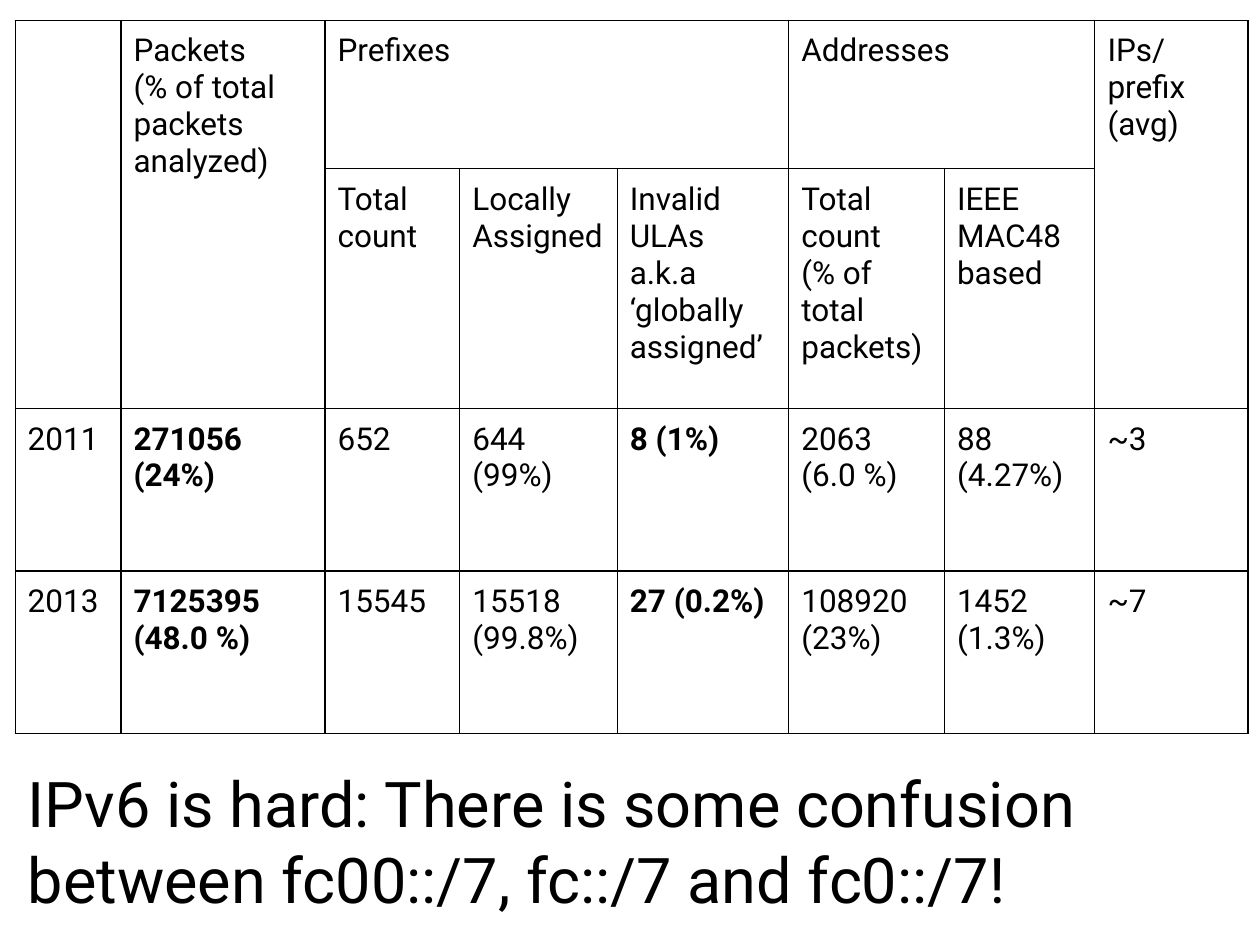
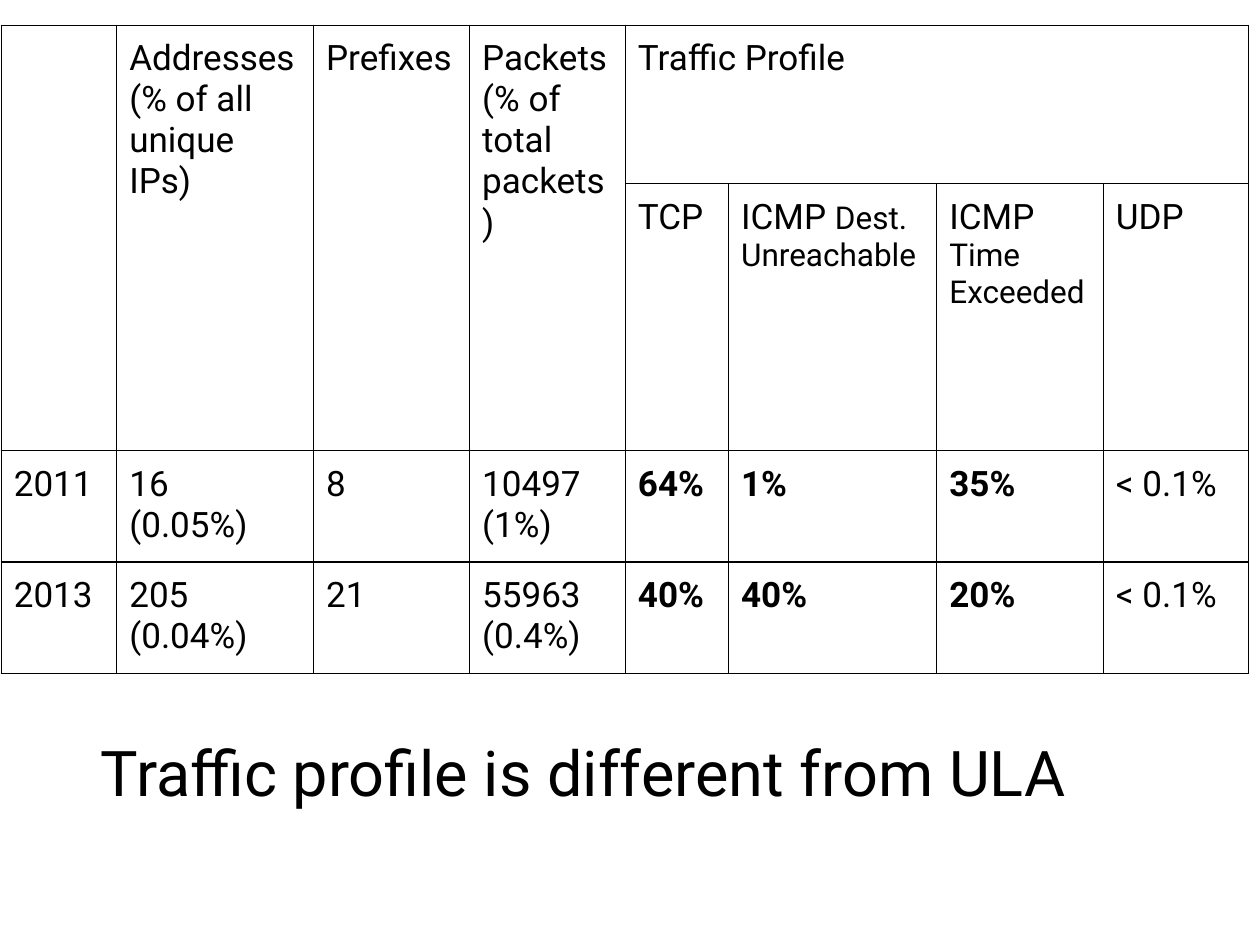
from dataclasses import dataclass

from lxml import etree
from pptx import Presentation
from pptx.dml.color import RGBColor
from pptx.enum.text import MSO_ANCHOR, MSO_AUTO_SIZE, PP_ALIGN
from pptx.oxml.ns import qn
from pptx.util import Pt

TOP = MSO_ANCHOR.TOP
LEFT = PP_ALIGN.LEFT
NO_FIT = MSO_AUTO_SIZE.NONE
TITLE_ONLY = 5


@dataclass(frozen=True)
class Theme:
    font: str = "Roboto"
    ink: str = "000000"
    paper: str = "FFFFFF"
    title: float = 36
    large: float = 20
    small: float = 18
    pad: float = 7.2
    rule: float = 0.75


THEME = Theme()


def write(frame, lines, *, size, color, font, bold=False):
    """Fill a frame; a line is a string or a list of (text, size) runs."""
    for i, line in enumerate(lines):
        para = frame.paragraphs[0] if i == 0 else frame.add_paragraph()
        para.alignment = LEFT
        runs = [(line, size)] if isinstance(line, str) else line
        for text, points in runs:
            run = para.add_run()
            run.text = text
            run.font.name = font
            run.font.size = Pt(points)
            run.font.bold = bold
            run.font.color.rgb = RGBColor.from_string(color)


class Deck:
    def __init__(self, theme):
        self.theme = theme
        self.prs = Presentation()
        self.prs.slide_width, self.prs.slide_height = Pt(720), Pt(540)
        self.slide = None

    def page(self):
        self.slide = self.prs.slides.add_slide(self.prs.slide_layouts[TITLE_ONLY])
        fill = self.slide.background.fill
        fill.solid()
        fill.fore_color.rgb = RGBColor.from_string(self.theme.paper)

    def pad(self, box):
        box.margin_left = box.margin_right = Pt(self.theme.pad)
        box.margin_top = box.margin_bottom = Pt(self.theme.pad)
        box.vertical_anchor = TOP

    def title(self, text, x, y, w, h):
        shape = self.slide.shapes.title
        shape.left, shape.top, shape.width, shape.height = map(Pt, (x, y, w, h))
        frame = shape.text_frame
        frame.word_wrap = True
        frame.auto_size = NO_FIT
        self.pad(frame)
        t = self.theme
        write(frame, [text], size=t.title, color=t.ink, font=t.font)

    def border(self, cell):
        props = cell._tc.get_or_add_tcPr()
        for i, side in enumerate(("lnL", "lnR", "lnT", "lnB")):
            line = etree.Element(qn(f"a:{side}"), w=str(Pt(self.theme.rule)))
            fill = etree.SubElement(line, qn("a:solidFill"))
            etree.SubElement(fill, qn("a:srgbClr"), val=self.theme.ink)
            props.insert(i, line)

    def table(self, x, y, cols, rows, cells, *, spans, strong, size):
        """Spans are (row, col, last row, last col); strong columns hold bold data."""
        shape = self.slide.shapes.add_table(
            len(rows), len(cols), Pt(x), Pt(y), Pt(sum(cols)), Pt(sum(rows)))
        grid = shape.table
        grid.first_row = grid.horz_banding = False
        for col, width in zip(grid.columns, cols):
            col.width = Pt(width)
        for row, height in zip(grid.rows, rows):
            row.height = Pt(height)
        for r, c, r2, c2 in spans:
            grid.cell(r, c).merge(grid.cell(r2, c2))
        t = self.theme
        for r, row in enumerate(cells):
            for c, value in enumerate(row):
                cell = grid.cell(r, c)
                cell.fill.background()
                self.border(cell)
                self.pad(cell)
                if value:
                    lines = value.split("\n") if isinstance(value, str) else value
                    write(cell.text_frame, lines, size=size, color=t.ink,
                          font=t.font, bold=r > 1 and c in strong)


def main():
    deck = Deck(THEME)
    big, small = THEME.large, THEME.small

    # Prefix and address counts
    deck.page()
    deck.title("IPv6 is hard: There is some confusion between "
               "fc00::/7, fc::/7 and fc0::/7!", 8.64, 429.84, 711.36, 96.5)
    deck.table(
        8.64, 11.52,
        [60.5, 116.6, 77, 90, 98, 89, 86, 87.5], [85, 136.8, 93, 93],
        [
            ["", "Packets\n(% of total packets analyzed)", "Prefixes", "", "",
             "Addresses", "", "IPs/prefix (avg)"],
            ["", "", "Total count", "Locally Assigned",
             "Invalid ULAs\na.k.a ‘globally assigned’",
             "Total count\n(% of total packets)", "IEEE MAC48 based", ""],
            ["2011", "271056\n(24%)", "652", "644 (99%)", "8 (1%)",
             "2063\n(6.0 %)", "88 (4.27%)", "~3"],
            ["2013", "7125395\n(48.0 %)", "15545", "15518 (99.8%)", "27 (0.2%)",
             "108920\n(23%)", "1452 (1.3%)", "~7"],
        ],
        spans=[(0, 0, 1, 0), (0, 1, 1, 1), (0, 2, 0, 4), (0, 5, 0, 6), (0, 7, 1, 7)],
        strong={1, 4}, size=small)

    # Traffic profile
    deck.page()
    deck.title("Traffic profile is different from ULA", 50.4, 411.84, 627.12, 99.4)
    deck.table(
        0.72, 14.4,
        [66, 112.5, 89.2, 89, 59, 119, 95.2, 83], [90.7, 152.6, 63.5, 63.5],
        [
            ["", "Addresses\n(% of all unique IPs)", "Prefixes",
             "Packets\n(% of total packets)", "Traffic Profile", "", "", ""],
            ["", "", "", "", "TCP",
             [[("ICMP ", big), ("Dest.", small)], [("Unreachable", small)]],
             [[("ICMP ", big), ("Time Exceeded", small)]], "UDP"],
            ["2011", "16\n(0.05%)", "8", "10497 (1%)", "64%", "1%", "35%", "< 0.1%"],
            ["2013", "205 (0.04%)", "21", "55963 (0.4%)", "40%", "40%", "20%", "< 0.1%"],
        ],
        spans=[(0, c, 1, c) for c in range(4)] + [(0, 4, 0, 7)],
        strong={4, 5, 6}, size=big)

    deck.prs.save("out.pptx")


if __name__ == "__main__":
    main()
